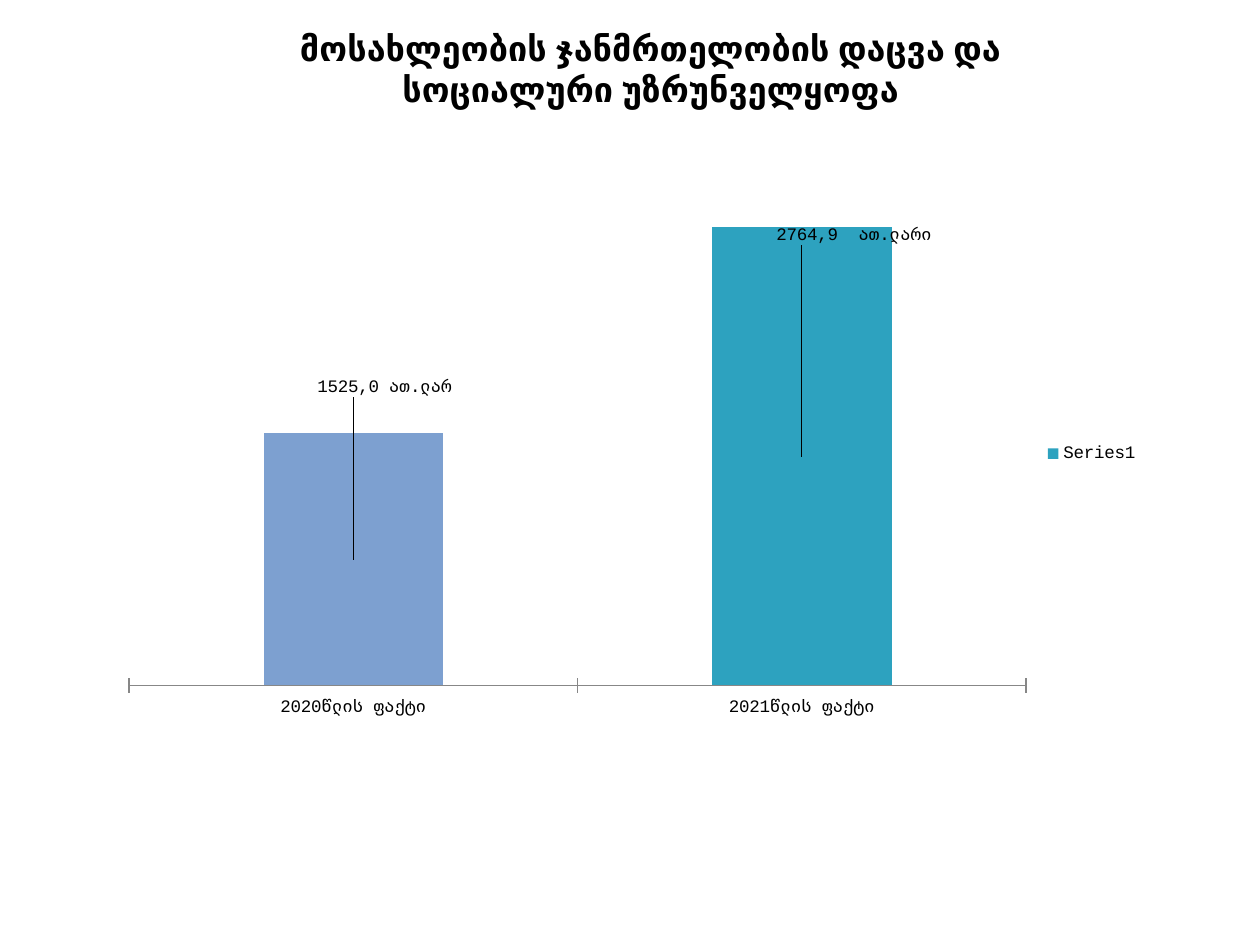
"""Build a slide comparing health and social spending in 2020 and 2021."""
from lxml.etree import SubElement
from pptx import Presentation
from pptx.chart.data import CategoryChartData
from pptx.dml.color import RGBColor
from pptx.enum.chart import XL_CHART_TYPE as ChartType
from pptx.enum.chart import XL_LEGEND_POSITION as LegendPosition
from pptx.enum.chart import XL_TICK_MARK as TickMark
from pptx.enum.text import MSO_ANCHOR as Anchor
from pptx.enum.text import MSO_AUTO_SIZE as AutoSize
from pptx.enum.text import PP_ALIGN as Align
from pptx.oxml.ns import qn
from pptx.util import Cm, Pt

TITLE = "მოსახლეობის ჯანმრთელობის დაცვა და სოციალური უზრუნველყოფა"
SERIES = "Series1"
BLACK = RGBColor(0x00, 0x00, 0x00)
GRAY = RGBColor(0x87, 0x87, 0x87)
BLUE = RGBColor(0x7D, 0xA0, 0xD0)
TEAL = RGBColor(0x2D, 0xA2, 0xBF)
BARS = [
    ("2020წლის ფაქტი", 1525, "1525,0 ათ.ლარ", BLUE, (0.03, -0.31)),
    ("2021წლის ფაქტი", 2764.9, "2764,9  ათ.ლარი", TEAL, (0.05, -0.4)),
]
PLOT = {"x": 0.02, "y": 0.02, "w": 0.86, "h": 0.9}


def style(font, name, size, bold=False):
    font.name, font.size, font.bold = name, Pt(size), bold
    font.color.rgb = BLACK


def set_layout(layout, values):
    manual = SubElement(layout, qn("c:manualLayout"))
    for tag, value in values:
        SubElement(manual, qn(f"c:{tag}")).set("val", str(value))


def add_title(page):
    box = page.shapes.title
    box.left, box.top, box.width, box.height = Cm(5.08), Cm(0.43), Cm(16.08), Cm(2.74)
    frame = box.text_frame
    frame.word_wrap, frame.auto_size = True, AutoSize.NONE
    frame.vertical_anchor = Anchor.TOP
    para = frame.paragraphs[0]
    para.alignment = Align.CENTER
    span = para.add_run()
    span.text = TITLE
    style(span.font, "Roboto", 19.5, True)


def add_bars(page):
    data = CategoryChartData()
    data.categories = [bar[0] for bar in BARS]
    data.add_series(SERIES, [bar[1] for bar in BARS])
    chart = page.shapes.add_chart(
        ChartType.COLUMN_STACKED, Cm(2.18), Cm(3.58), Cm(21.03), Cm(11.13), data
    ).chart
    style(chart.font, "Courier New", 10)
    chart.has_title = False
    chart.has_legend = True
    chart.legend.position = LegendPosition.RIGHT
    chart.legend.include_in_layout = False

    value_axis = chart.value_axis
    value_axis.visible = value_axis.has_major_gridlines = False
    value_axis.minimum_scale, value_axis.maximum_scale = 0, 3000
    chart.category_axis.major_tick_mark = TickMark.CROSS
    chart.category_axis.format.line.color.rgb = GRAY

    plot = chart.plots[0]
    plot.gap_width, plot.overlap, plot.vary_by_categories = 150, 100, False
    series = plot.series[0]
    series.format.fill.solid()
    series.format.fill.fore_color.rgb = TEAL
    series.data_labels.show_value = True
    for point, (_, _, text, color, shift) in zip(series.points, BARS):
        point.format.fill.solid()
        point.format.fill.fore_color.rgb = color
        span = point.data_label.text_frame.paragraphs[0].add_run()
        span.text = text
        style(span.font, "Courier New", 10)
    for label, bar in zip(series.data_labels._element.findall(qn("c:dLbl")), BARS):
        layout = SubElement(label, qn("c:layout"))
        label.insert(1, layout)
        set_layout(layout, zip("xy", bar[4]))

    area = chart._chartSpace.chart.plotArea
    layout = area.find(qn("c:layout"))
    if layout is None:
        layout = SubElement(area, qn("c:layout"))
        area.insert(0, layout)
    modes = [("layoutTarget", "inner"), ("xMode", "edge"), ("yMode", "edge")]
    set_layout(layout, modes + list(PLOT.items()))


def main():
    deck = Presentation()
    deck.slide_width, deck.slide_height = Cm(25.4), Cm(19.05)
    page = deck.slides.add_slide(deck.slide_layouts[5])
    add_title(page)
    add_bars(page)
    deck.save("out.pptx")


if __name__ == "__main__":
    main()
